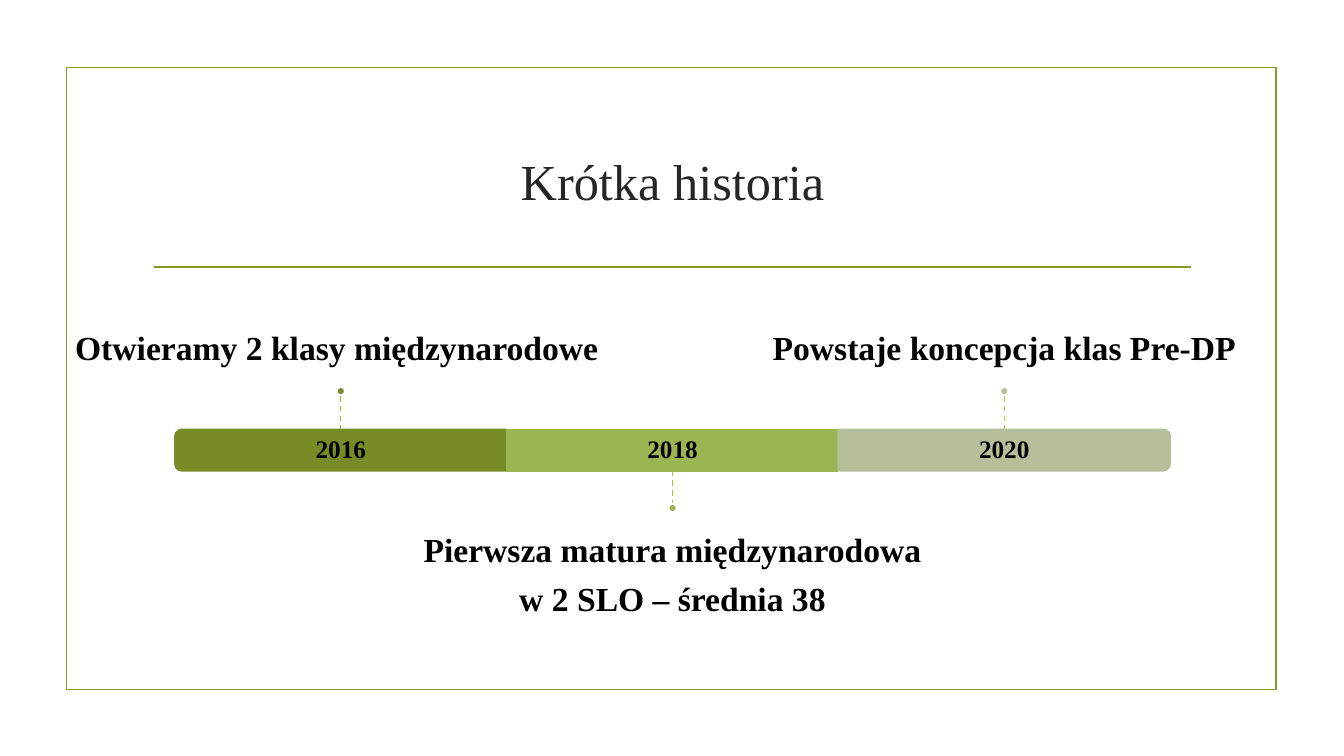
from pptx import Presentation
from pptx.dml.color import RGBColor
from pptx.enum.dml import MSO_LINE
from pptx.enum.shapes import MSO_CONNECTOR, MSO_SHAPE
from pptx.enum.text import MSO_ANCHOR, PP_ALIGN
from pptx.oxml.ns import qn
from pptx.util import Pt
from lxml.etree import SubElement

PX = 9144  # 100 px to the inch
FONT = "Times New Roman"
OLIVE = RGBColor(0x83, 0x99, 0x2A)
DARK = RGBColor(0x77, 0x8B, 0x26)
GREEN = RGBColor(0x9C, 0xB4, 0x51)
SAGE = RGBColor(0xB5, 0xBF, 0x9A)
DASHES = (RGBColor(0x97, 0xB5, 0x2F), RGBColor(0xA4, 0xC7, 0x32),
          RGBColor(0xAC, 0xD0, 0x3E))
INK = RGBColor(0x26, 0x26, 0x26)
BLACK = RGBColor(0, 0, 0)
WHITE = RGBColor(0xFF, 0xFF, 0xFF)

# Timeline geometry
FIRST, STEP = 338, 329
TOP, THICK = 426, 41
STEM, DOT = 33, 8
WIDE, TALL, PAD = 548, 145, 20

# Year, label lines, bar colour, bar shape, turn, label above the bar
STAGES = (
    ("2016", ["Otwieramy 2 klasy międzynarodowe "], DARK,
     MSO_SHAPE.ROUND_2_SAME_RECTANGLE, 270, True),
    ("2018", ["Pierwsza matura międzynarodowa", "w 2 SLO – średnia 38"], GREEN,
     MSO_SHAPE.RECTANGLE, 0, False),
    ("2020", ["Powstaje koncepcja klas Pre-DP"], SAGE,
     MSO_SHAPE.ROUND_2_SAME_RECTANGLE, 90, True),
)


def scale(*sizes):
    return [round(size * PX) for size in sizes]


def add_form(slide, kind, box, fill, edge):
    form = slide.shapes.add_shape(kind, *scale(*box))
    form.shadow.inherit = False
    if fill is None:
        form.fill.background()
    else:
        form.fill.solid()
        form.fill.fore_color.rgb = fill
    form.line.color.rgb = edge
    form.line.width = Pt(1.25)
    return form


def add_line(slide, ends, color, width, dash=None):
    line = slide.shapes.add_connector(MSO_CONNECTOR.STRAIGHT, *scale(*ends))
    line.line.color.rgb = color
    line.line.width = Pt(width)
    if dash:
        line.line.dash_style = dash
    SubElement(line._element.spPr, qn("a:effectLst"))


def add_run(para, text, size, color, bold):
    para.alignment = PP_ALIGN.CENTER
    run = para.add_run()
    run.text = text
    run.font.name = FONT
    run.font.size = Pt(size)
    run.font.bold = bold
    run.font.color.rgb = color


def add_text(slide, box, lines, size, anchor, top=0, base=0):
    frame = slide.shapes.add_textbox(*scale(*box)).text_frame
    frame.word_wrap = True
    frame.vertical_anchor = anchor
    frame.margin_left = frame.margin_right = 0
    frame.margin_top, frame.margin_bottom = scale(top, base)
    for i, text in enumerate(lines):
        para = frame.add_paragraph() if i else frame.paragraphs[0]
        para.line_spacing = 0.9
        para.space_after = Pt(9.5)
        add_run(para, text, size, BLACK, True)


def set_title(slide, text):
    title = slide.shapes.title
    title.left, title.top, title.width, title.height = scale(142, 107, 1050, 143)
    title.text_frame.vertical_anchor = MSO_ANCHOR.MIDDLE
    add_run(title.text_frame.paragraphs[0], text, 36, INK, False)


def add_stage(slide, mid, stage, dash):
    year, lines, color, kind, turn, above = stage
    # Bar: the rounded ends are upright shapes turned on their side
    wide, tall = (THICK, STEP) if turn else (STEP, THICK)
    center = TOP + THICK / 2
    bar = add_form(slide, kind, (mid - wide / 2, center - tall / 2, wide, tall),
                   color, color)
    bar.rotation = turn
    add_text(slide, (mid - STEP / 2, TOP, STEP, THICK), [year], 18,
             MSO_ANCHOR.MIDDLE)

    # Label, stem and dot
    left = mid - WIDE / 2
    if above:
        start, end = TOP - STEM, TOP
        spot = start - DOT - 1
        add_text(slide, (left, 240, WIDE, TALL), lines, 24,
                 MSO_ANCHOR.BOTTOM, base=PAD)
    else:
        start, end = TOP + THICK, TOP + THICK + STEM
        spot = end
        add_text(slide, (left, 509, WIDE, TALL), lines, 24,
                 MSO_ANCHOR.TOP, top=PAD)
    add_line(slide, (mid, start, mid, end), dash, 1, MSO_LINE.DASH)
    add_form(slide, MSO_SHAPE.OVAL, (mid - DOT / 2, spot, DOT, DOT), color, WHITE)


def main():
    deck = Presentation()
    deck.slide_width, deck.slide_height = scale(1333, 750)
    slide = deck.slides.add_slide(deck.slide_layouts[5])

    # Frame, title and rule
    add_form(slide, MSO_SHAPE.RECTANGLE, (66, 67, 1200, 617), None, OLIVE)
    set_title(slide, "Krótka historia")
    add_line(slide, (153, 265, 1181, 265), OLIVE, 1.25)

    # Timeline
    for i, (stage, dash) in enumerate(zip(STAGES, DASHES)):
        add_stage(slide, FIRST + i * STEP, stage, dash)

    deck.save("out.pptx")


if __name__ == "__main__":
    main()
